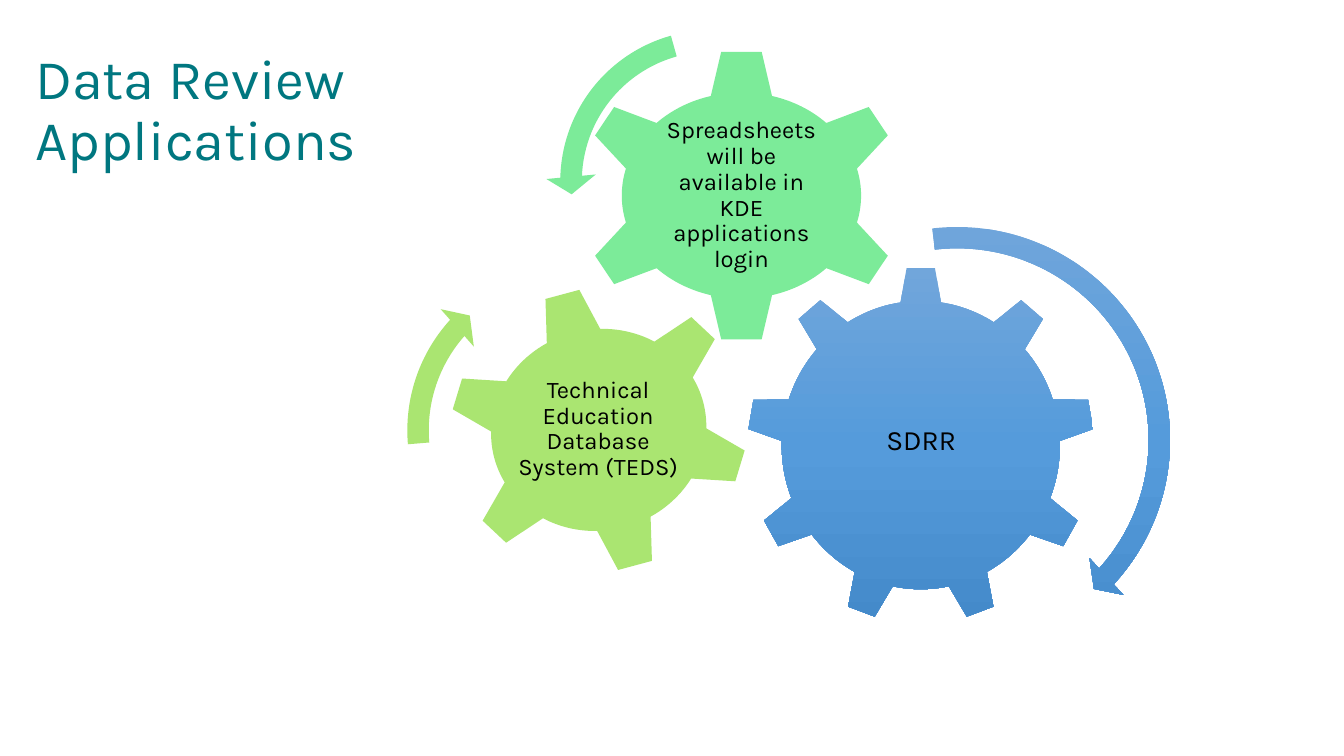
from copy import deepcopy
from pptx import Presentation
from pptx import util as u
from pptx.dml.color import RGBColor
from pptx.enum import shapes, text
from pptx.oxml import ns

COLORS = {"title": "007780", "label": "000000", "green": "7CEB99", "lime": "AAE571"}
BLUE_STOPS = [(0, "71A6DB"), (0.5, "559BDB"), (1, "448ACA")]
FONT = "Karla"
KIND = shapes.MSO_SHAPE

TITLE = ("Data Review\vApplications", (0, 0, 408.2, 159.8))
GEARS = [
    dict(kind=KIND.GEAR_9, box=(533.5, 190.1, 248.4, 255.6), turn=0, color="blue",
         label="SDRR", label_box=(583.9, 249.1, 148.3, 132.5), size=20, inset=2.2),
    dict(kind=KIND.GEAR_6, box=(412.6, 34.6, 234, 210.2), turn=0, color="green",
         label="Spreadsheets will be available in KDE applications login",
         label_box=(468.7, 87.8, 121.7, 103.7), size=17, inset=1.7),
    dict(kind=KIND.GEAR_6, box=(319.7, 204.5, 216, 205.2), turn=345, color="lime",
         label="Technical Education Database System (TEDS)",
         label_box=(367.2, 248.4, 120.2, 116.6), size=17, inset=1.7),
]
ARROWS = [
    dict(kind=KIND.CIRCULAR_ARROW, box=(521.3, 151.9, 324.7, 324.7), turn=0, color="blue",
         adjustments=(0.047, 2.99, 25.455, 157.994, 0.055)),
    dict(kind=KIND.LEFT_CIRCULAR_ARROW, box=(390.2, 11.5, 236.2, 236.2), turn=7.1, color="green",
         adjustments=(0.065, 4.3, 104.891, 148.378, 0.075)),
    dict(kind=KIND.CIRCULAR_ARROW, box=(280.8, 180, 254.9, 254.9), turn=0, color="lime",
         adjustments=(0.06, 3.941, 133.138, 105.082, 0.07)),
]


def points(box):
    return [u.Pt(length) for length in box]


def fill_blue(shape):
    shape.fill.gradient()
    shape.fill.gradient_angle = 270
    stop_list = shape.element.spPr.find(ns.qn("a:gradFill")).find(ns.qn("a:gsLst"))
    stop_list.append(deepcopy(stop_list[0]))
    for stop, (position, color) in zip(shape.fill.gradient_stops, BLUE_STOPS):
        stop.position = position
        stop.color.rgb = RGBColor.from_string(color)


def add_part(slide, kind, box, turn, color, adjustments=()):
    shape = slide.shapes.add_shape(kind, *points(box))
    shape.rotation = turn
    shape.shadow.inherit = False
    shape.line.fill.background()
    for index, value in enumerate(adjustments):
        shape.adjustments[index] = value
    if color == "blue":
        fill_blue(shape)
    else:
        shape.fill.solid()
        shape.fill.fore_color.rgb = RGBColor.from_string(COLORS[color])


def add_text(slide, content, box, size, color, align, left, inset):
    frame = slide.shapes.add_textbox(*points(box)).text_frame
    frame.word_wrap = True
    frame.vertical_anchor = text.MSO_ANCHOR.MIDDLE
    frame.margin_left = u.Pt(left)
    frame.margin_top = frame.margin_right = frame.margin_bottom = u.Pt(inset)
    paragraph = frame.paragraphs[0]
    paragraph.text = content
    paragraph.alignment = align
    paragraph.line_spacing = 0.9
    for run in paragraph.runs:
        run.font.name = FONT
        run.font.size = u.Pt(size)
        run.font.color.rgb = RGBColor.from_string(COLORS[color])


def main():
    presentation = Presentation()
    presentation.slide_width, presentation.slide_height = u.Pt(960), u.Pt(540)
    slide = presentation.slides.add_slide(presentation.slide_layouts[6])
    for gear in GEARS:
        add_part(slide, gear["kind"], gear["box"], gear["turn"], gear["color"])
        add_text(slide, gear["label"], gear["label_box"], size=gear["size"], color="label",
                 align=text.PP_ALIGN.CENTER, left=gear["inset"], inset=gear["inset"])
    for arrow in ARROWS:
        add_part(slide, **arrow)
    add_text(slide, *TITLE, size=40, color="title", align=text.PP_ALIGN.LEFT, left=25.2, inset=3.6)
    presentation.save("out.pptx")


if __name__ == "__main__":
    main()
